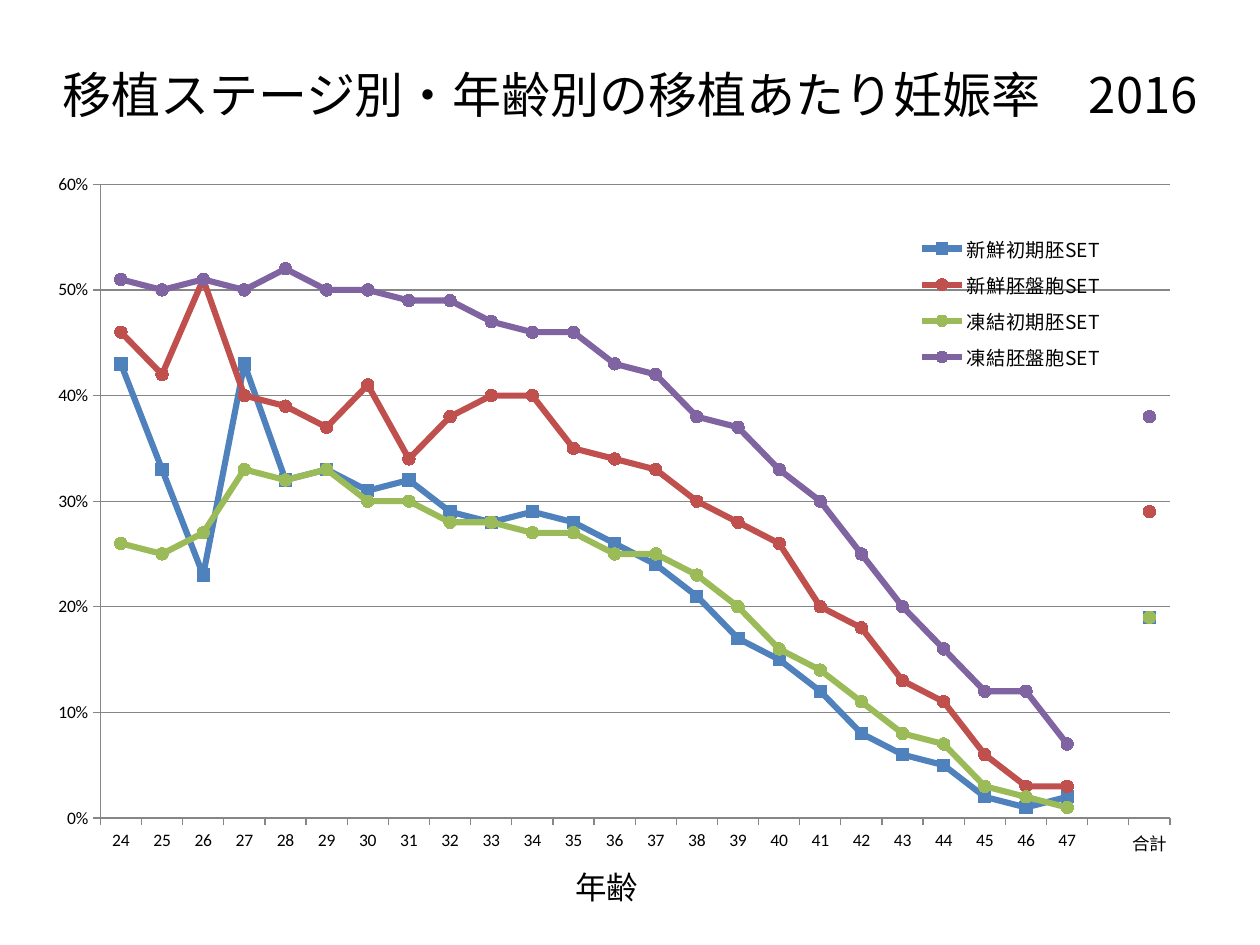
from dataclasses import dataclass

from lxml.etree import SubElement
from pptx import Presentation
from pptx.chart.data import CategoryChartData
from pptx.dml.color import RGBColor
from pptx.enum.chart import XL_CHART_TYPE as ChartType, XL_LEGEND_POSITION as LegendPosition
from pptx.enum.chart import XL_MARKER_STYLE as Marker, XL_TICK_MARK as Tick
from pptx.enum.text import MSO_ANCHOR as Anchor, PP_ALIGN as Align
from pptx.oxml.ns import qn
from pptx.util import Inches, Pt


@dataclass(frozen=True)
class Theme:
    ink: str = "000000"
    rule: str = "868686"
    japanese: str = "Noto Sans CJK JP"
    latin: str = "Arial"
    chart: str = "Calibri"
    title_size: int = 28
    axis_title_size: int = 18
    legend_size: int = 11
    label_size: int = 10
    line_width: float = 3.5
    marker_size: int = 7


AGES = [str(age) for age in range(24, 48)]
RATES = [
    ("新鮮初期胚SET", "4F81BD", Marker.SQUARE, 0.19,
     [0.43, 0.33, 0.23, 0.43, 0.32, 0.33, 0.31, 0.32, 0.29, 0.28, 0.29, 0.28,
      0.26, 0.24, 0.21, 0.17, 0.15, 0.12, 0.08, 0.06, 0.05, 0.02, 0.01, 0.02]),
    ("新鮮胚盤胞SET", "C0504D", Marker.CIRCLE, 0.29,
     [0.46, 0.42, 0.51, 0.40, 0.39, 0.37, 0.41, 0.34, 0.38, 0.40, 0.40, 0.35,
      0.34, 0.33, 0.30, 0.28, 0.26, 0.20, 0.18, 0.13, 0.11, 0.06, 0.03, 0.03]),
    ("凍結初期胚SET", "9BBB59", Marker.CIRCLE, 0.19,
     [0.26, 0.25, 0.27, 0.33, 0.32, 0.33, 0.30, 0.30, 0.28, 0.28, 0.27, 0.27,
      0.25, 0.25, 0.23, 0.20, 0.16, 0.14, 0.11, 0.08, 0.07, 0.03, 0.02, 0.01]),
    ("凍結胚盤胞SET", "8064A2", Marker.CIRCLE, 0.38,
     [0.51, 0.50, 0.51, 0.50, 0.52, 0.50, 0.50, 0.49, 0.49, 0.47, 0.46, 0.46,
      0.43, 0.42, 0.38, 0.37, 0.33, 0.30, 0.25, 0.20, 0.16, 0.12, 0.12, 0.07]),
]


class SlideBuilder:
    def __init__(self, deck, theme):
        self.theme = theme
        self.size = deck.slide_width, deck.slide_height
        self.slide = deck.slides.add_slide(deck.slide_layouts[6])

    def area(self, *shares):
        return [round(share * side) for share, side in zip(shares, self.size * 2)]

    def style(self, font, size, face):
        font.size = Pt(size)
        font.name = face
        font.color.rgb = RGBColor.from_string(self.theme.ink)

    def text(self, words, shares, size, face, wrap=True):
        frame = self.slide.shapes.add_textbox(*self.area(*shares)).text_frame
        frame.word_wrap = wrap
        frame.vertical_anchor = Anchor.MIDDLE
        frame.text = words
        paragraph = frame.paragraphs[0]
        paragraph.alignment = Align.CENTER
        run = paragraph.runs[0]
        self.style(run.font, size, face)
        SubElement(run._r.get_or_add_rPr(), qn("a:ea"), typeface=face)

    def layout(self, parent, position, shares, inner=False):
        for old in parent.findall(qn("c:layout")):
            parent.remove(old)
        layout = parent.makeelement(qn("c:layout"))
        parent.insert(position, layout)
        manual = SubElement(layout, qn("c:manualLayout"))
        if inner:
            SubElement(manual, qn("c:layoutTarget"), val="inner")
        for key in ("xMode", "yMode"):
            SubElement(manual, qn(f"c:{key}"), val="edge")
        for key, share in zip("xywh", shares):
            SubElement(manual, qn(f"c:{key}"), val=str(share))

    def rule(self, line):
        line.color.rgb = RGBColor.from_string(self.theme.rule)
        line.width = Pt(0.75)

    def line_chart(self, categories, rows, shares, plot_shares, legend_shares):
        theme = self.theme
        data = CategoryChartData(number_format="0%")
        data.categories = categories
        for name, _, _, total, rates in rows:
            data.add_series(name, rates + [None, total])
        chart = self.slide.shapes.add_chart(
            ChartType.LINE_MARKERS, *self.area(*shares), data).chart
        chart.has_title = False
        self.style(chart.font, theme.label_size, theme.chart)
        chart.plots[0].vary_by_categories = False
        for series, (_, color, marker, _, _) in zip(chart.plots[0].series, rows):
            rgb = RGBColor.from_string(color)
            series.smooth = False
            series.format.line.color.rgb = rgb
            series.format.line.width = Pt(theme.line_width)
            series.marker.style = marker
            series.marker.size = theme.marker_size
            series.marker.format.fill.solid()
            series.marker.format.fill.fore_color.rgb = rgb
            series.marker.format.line.color.rgb = rgb

        for axis in (chart.category_axis, chart.value_axis):
            axis.major_tick_mark = Tick.OUTSIDE
            axis.minor_tick_mark = Tick.NONE
            self.rule(axis.format.line)
        rate_axis = chart.value_axis
        rate_axis.minimum_scale, rate_axis.maximum_scale = 0, 0.6
        rate_axis.major_unit = 0.1
        rate_axis.tick_labels.number_format = "0%"
        rate_axis.tick_labels.number_format_is_linked = False
        rate_axis.has_major_gridlines = True
        self.rule(rate_axis.major_gridlines.format.line)

        chart.has_legend = True
        legend = chart.legend
        legend.position = LegendPosition.RIGHT
        legend.include_in_layout = False
        self.style(legend.font, theme.legend_size, theme.japanese)
        self.layout(legend._element, 1, legend_shares)
        self.layout(chart._chartSpace.chart.plotArea, 0, plot_shares, inner=True)


def main():
    deck = Presentation()
    deck.slide_width, deck.slide_height = Inches(10), Inches(7.5)
    theme = Theme()
    page = SlideBuilder(deck, theme)
    page.text("移植ステージ別・年齢別の移植あたり妊娠率\u30002016".replace("\u3000", "　"),
              (0.037, 0.039, 0.926, 0.121), theme.title_size, theme.japanese)
    page.line_chart(AGES + ["", "合計"], RATES, (0.033, 0.173, 0.933, 0.737),
                    (0.05, 0.03, 0.91, 0.91), (0.74, 0.09, 0.17, 0.22))
    page.text("年齢", (0.446, 0.912, 0.071, 0.053),
              theme.axis_title_size, theme.latin, wrap=False)
    deck.save("out.pptx")


if __name__ == "__main__":
    main()
